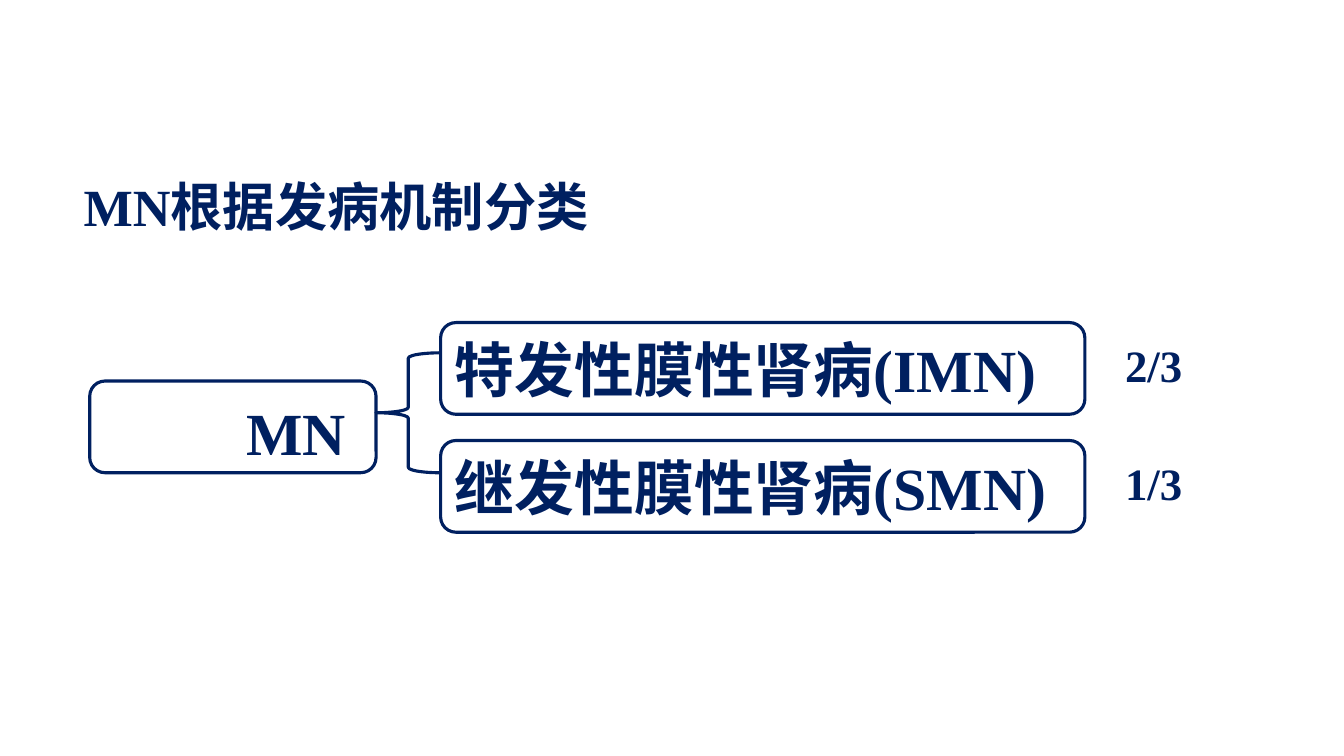
from dataclasses import dataclass

from lxml.etree import SubElement
from pptx import Presentation
from pptx.dml.color import RGBColor
from pptx.enum.lang import MSO_LANGUAGE_ID
from pptx.enum.shapes import MSO_SHAPE
from pptx.enum.text import MSO_ANCHOR, PP_ALIGN
from pptx.oxml.ns import qn
from pptx.util import Inches, Pt

NAVY = RGBColor(0x00, 0x20, 0x60)
LATIN, CJK = "Times New Roman", "Arial"
BOX_H = 0.91
TYPE_X, TYPE_W = 4.37, 6.39
SHARE_X, SHARE_W, SHARE_H = 11.06, 0.89, 0.64


@dataclass
class Subtype:
    name: str
    abbreviation: str
    share: str
    top: float


SUBTYPES = [
    Subtype("特发性膜性肾病", "(IMN)", "2/3", 3.2),
    Subtype("继发性膜性肾病", "(SMN)", "1/3", 4.37),
]


def add_text(sp, runs: list[tuple[str, str]], size: float,
             align=PP_ALIGN.LEFT, left: float = 0.1, top: float = 0) -> None:
    """Fill a shape with one line of bold navy (text, font) runs."""
    tf = sp.text_frame
    tf.word_wrap = True
    tf.vertical_anchor = MSO_ANCHOR.MIDDLE
    tf.margin_left, tf.margin_right = Inches(left), Inches(0.1)
    tf.margin_top, tf.margin_bottom = Inches(top), 0
    p = tf.paragraphs[0]
    p.alignment = align
    for text, font in runs:
        r = p.add_run()
        r.text = text
        r.font.name, r.font.size, r.font.bold = font, Pt(size), True
        r.font.color.rgb = NAVY
        r.font.language_id = MSO_LANGUAGE_ID.SIMPLIFIED_CHINESE
        SubElement(r.font._element, qn("a:ea")).set("typeface", CJK)


def add_outline(s, kind: MSO_SHAPE, x: float, y: float, w: float, h: float):
    """Add an unfilled shape with a navy line."""
    sp = s.shapes.add_shape(kind, Inches(x), Inches(y), Inches(w), Inches(h))
    sp.shadow.inherit = False
    sp.fill.background()
    sp.line.color.rgb = NAVY
    sp.line.width = Pt(2.25)
    return sp


def add_label(s, x: float, y: float, w: float, h: float, text: str,
              size: float, align=PP_ALIGN.LEFT) -> None:
    sp = s.shapes.add_textbox(Inches(x), Inches(y), Inches(w), Inches(h))
    add_text(sp, [(text, LATIN)], size, align)


def main() -> None:
    prs = Presentation()
    prs.slide_width, prs.slide_height = Inches(13.33), Inches(7.5)
    s = prs.slides.add_slide(prs.slide_layouts[6])

    # Heading
    add_label(s, 0.16, 1.68, 6.35, 0.73, "MN根据发病机制分类", 37.3, PP_ALIGN.CENTER)

    # Disease and brace
    disease = add_outline(s, MSO_SHAPE.ROUNDED_RECTANGLE, 0.89, 3.78, 2.84, BOX_H)
    add_text(disease, [("MN", LATIN)], 42.7, left=1.51, top=0.1)
    add_outline(s, MSO_SHAPE.LEFT_BRACE, 3.73, 3.5, 0.64, 1.19)

    # Subtypes with their shares
    for subtype in SUBTYPES:
        sp = add_outline(s, MSO_SHAPE.ROUNDED_RECTANGLE,
                         TYPE_X, subtype.top, TYPE_W, BOX_H)
        add_text(sp, [(subtype.name, CJK), (subtype.abbreviation, LATIN)], 42.7)
        add_label(s, SHARE_X, subtype.top + 0.1, SHARE_W, SHARE_H, subtype.share, 32)

    prs.save("out.pptx")


if __name__ == "__main__":
    main()
